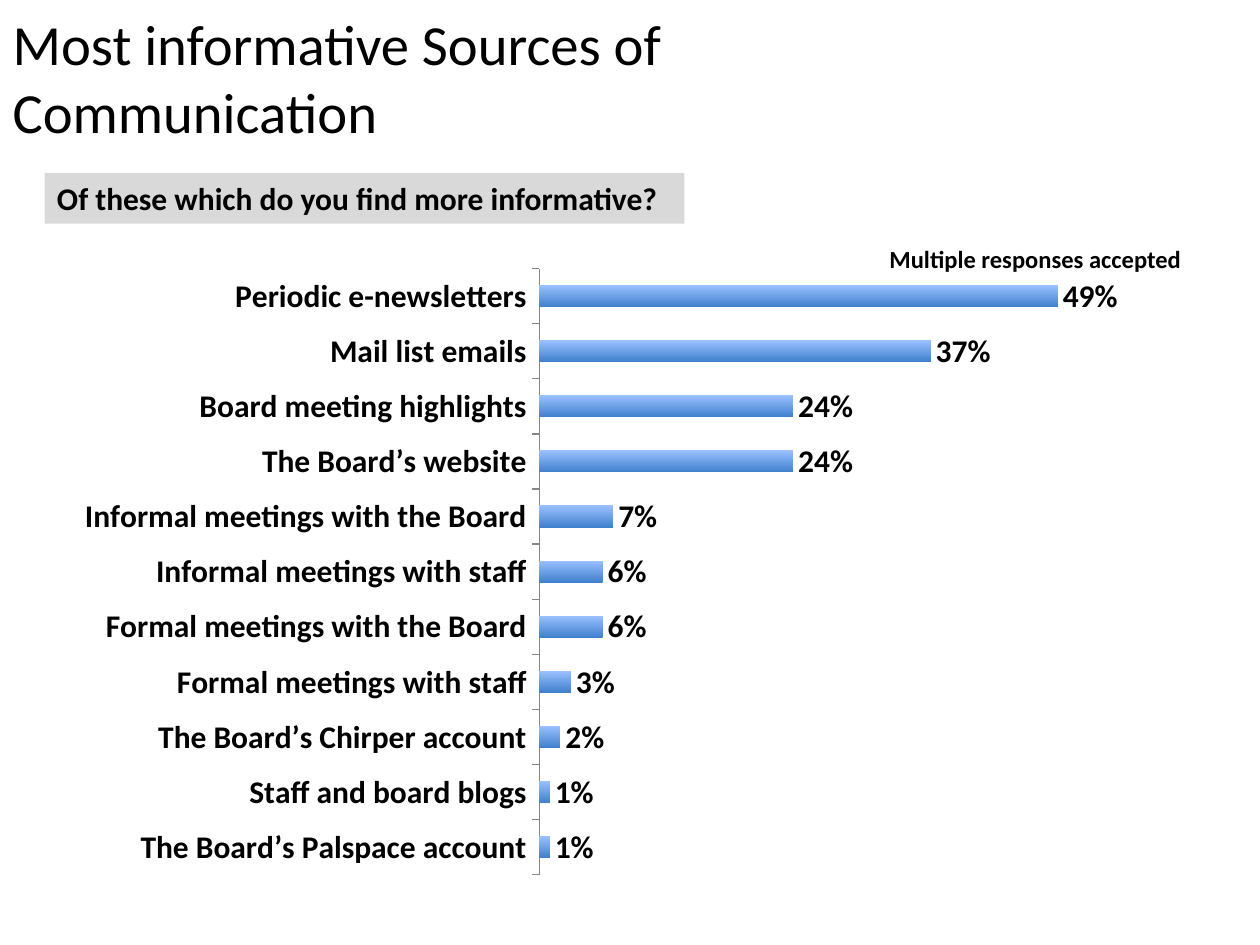
from dataclasses import dataclass

from lxml import etree
from pptx import Presentation
from pptx.chart.data import CategoryChartData
from pptx.dml.color import RGBColor
from pptx.enum.chart import XL_CHART_TYPE, XL_LABEL_POSITION, XL_TICK_MARK
from pptx.enum.shapes import MSO_SHAPE
from pptx.enum.text import MSO_ANCHOR, MSO_AUTO_SIZE, PP_ALIGN
from pptx.util import Cm, Pt

BAR = XL_CHART_TYPE.BAR_CLUSTERED
OUTSIDE_END = XL_LABEL_POSITION.OUTSIDE_END
TICK_OUT = XL_TICK_MARK.OUTSIDE
RECT = MSO_SHAPE.RECTANGLE
MIDDLE = MSO_ANCHOR.MIDDLE
LEFT = PP_ALIGN.LEFT
NO_FIT = MSO_AUTO_SIZE.NONE

FONT = "Calibri"
COLORS = {
    "text": "000000",
    "question": "D9D9D9",
    "axis": "868686",
    "bar_bottom": "3F80CD",
    "bar_top": "9BC1FF",
}


@dataclass
class Box:
    x: float
    y: float
    w: float
    h: float

    def lengths(self) -> tuple:
        return Cm(self.x), Cm(self.y), Cm(self.w), Cm(self.h)


@dataclass
class Source:
    name: str
    share: float


SOURCES = [
    Source("Periodic e-newsletters", 0.49),
    Source("Mail list emails", 0.37),
    Source("Board meeting highlights", 0.24),
    Source("The Board’s website", 0.24),
    Source("Informal meetings with the Board", 0.07),
    Source("Informal meetings with staff", 0.06),
    Source("Formal meetings with the Board", 0.06),
    Source("Formal meetings with staff", 0.03),
    Source("The Board’s Chirper account", 0.02),
    Source("Staff and board blogs", 0.01),
    Source("The Board’s Palspace account", 0.01),
]
PLOT_LAYOUT = {"x": 0.42, "y": 0.02, "w": 0.56, "h": 0.96}


def rgb(name: str) -> RGBColor:
    return RGBColor.from_string(COLORS[name])


def style_font(font, size: float, bold: bool) -> None:
    for key, value in {"name": FONT, "size": Pt(size), "bold": bold}.items():
        setattr(font, key, value)
    font.color.rgb = rgb("text")


def write(sp, text: str, size: float, bold: bool = True, wrap: bool = True) -> None:
    tf = sp.text_frame
    for key, value in {"word_wrap": wrap, "auto_size": NO_FIT, "vertical_anchor": MIDDLE}.items():
        setattr(tf, key, value)
    p = tf.paragraphs[0]
    p.alignment = LEFT
    r = p.add_run()
    r.text = text
    style_font(r.font, size, bold)


def set_plot_layout(chart) -> None:
    plot_area = chart.plots[0]._element.getparent()
    ns = etree.QName(plot_area).namespace
    for old in plot_area.findall(f"{{{ns}}}layout"):
        plot_area.remove(old)
    layout = etree.Element(f"{{{ns}}}layout")
    manual = etree.SubElement(layout, f"{{{ns}}}manualLayout")
    values = {"layoutTarget": "inner", "xMode": "edge", "yMode": "edge", **PLOT_LAYOUT}
    for tag, value in values.items():
        etree.SubElement(manual, f"{{{ns}}}{tag}").set("val", str(value))
    plot_area.insert(0, layout)


def add_sources_chart(s, box: Box, sources: list[Source]) -> None:
    data = CategoryChartData(number_format="0%")
    rows = sources[::-1]
    data.categories = [row.name for row in rows]
    data.add_series("Series 1", [row.share for row in rows])
    chart = s.shapes.add_chart(BAR, *box.lengths(), data).chart
    chart.has_legend = False
    chart.has_title = False
    style_font(chart.font, 18, True)
    set_plot_layout(chart)

    axis = chart.category_axis
    axis.major_tick_mark = TICK_OUT
    axis.format.line.color.rgb = rgb("axis")
    style_font(axis.tick_labels.font, 18, True)
    value_axis = chart.value_axis
    scale = {"visible": False, "has_major_gridlines": False,
             "minimum_scale": 0, "maximum_scale": 0.6}
    for key, value in scale.items():
        setattr(value_axis, key, value)
    value_axis.tick_labels.number_format = "0%"
    value_axis.tick_labels.number_format_is_linked = False

    plot = chart.plots[0]
    plot.gap_width = 150
    plot.vary_by_categories = False
    plot.has_data_labels = True
    labels = plot.data_labels
    label_format = {"show_value": True, "number_format": "0%",
                    "number_format_is_linked": False, "position": OUTSIDE_END}
    for key, value in label_format.items():
        setattr(labels, key, value)
    style_font(labels.font, 18, True)

    fill = plot.series[0].format.fill
    fill.gradient()
    fill.gradient_angle = 90
    for stop, name in zip(fill.gradient_stops, ("bar_bottom", "bar_top")):
        stop.color.rgb = rgb(name)


def add_question(s, box: Box, text: str) -> None:
    sp = s.shapes.add_shape(RECT, *box.lengths())
    sp.shadow.inherit = False
    sp.fill.solid()
    sp.fill.fore_color.rgb = rgb("question")
    sp.line.fill.background()
    write(sp, text, 18)


def main() -> None:
    prs = Presentation()
    prs.slide_width, prs.slide_height = Cm(25.4), Cm(19.05)
    s = prs.slides.add_slide(prs.slide_layouts[5])

    title = s.shapes.title
    title.left, title.top, title.width, title.height = Box(0, 0.13, 19.89, 2.84).lengths()
    write(title, "Most informative Sources of Communication", 32.4, bold=False)

    add_sources_chart(s, Box(1.27, 5.16, 22.86, 12.73), SOURCES)
    add_question(s, Box(0.9, 3.49, 12.9, 1.02), "Of these which do you find more informative?")
    note = s.shapes.add_textbox(*Box(17.68, 4.78, 6.45, 0.86).lengths())
    write(note, "Multiple responses accepted", 14, wrap=False)

    prs.save("out.pptx")


if __name__ == "__main__":
    main()
